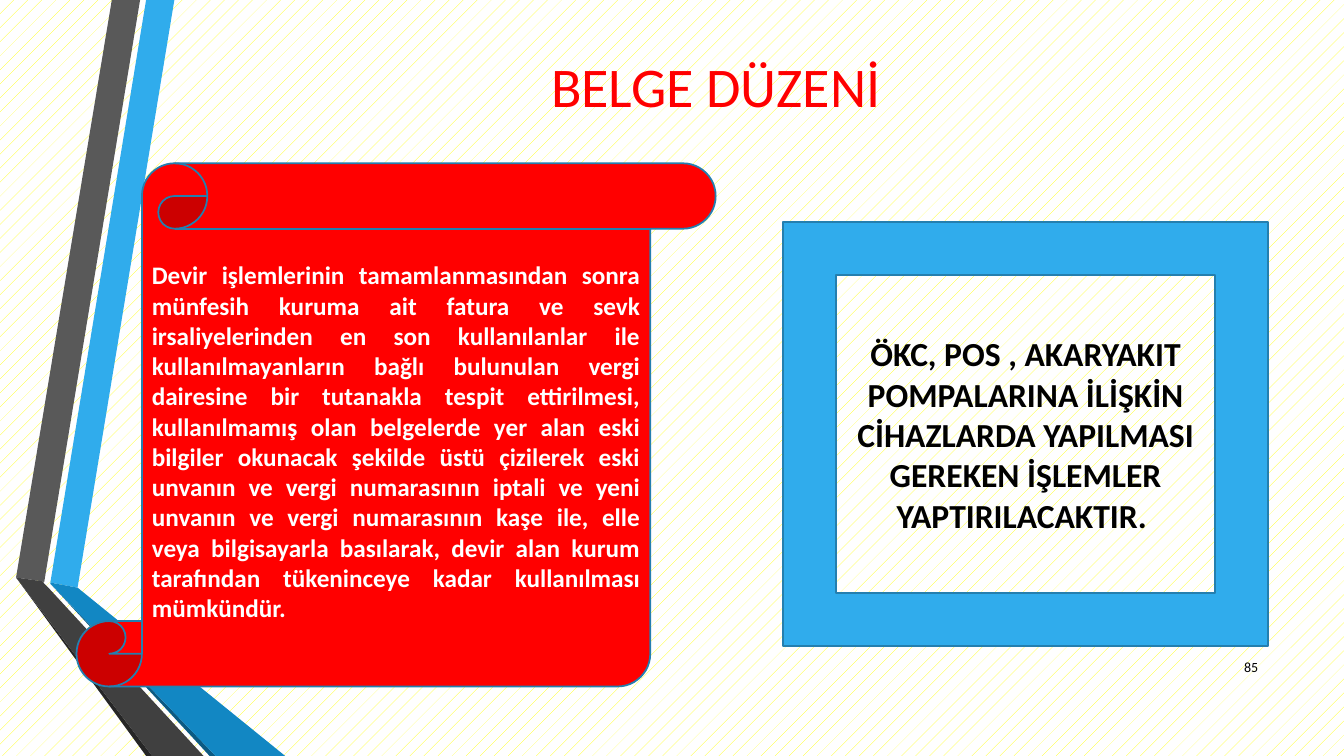
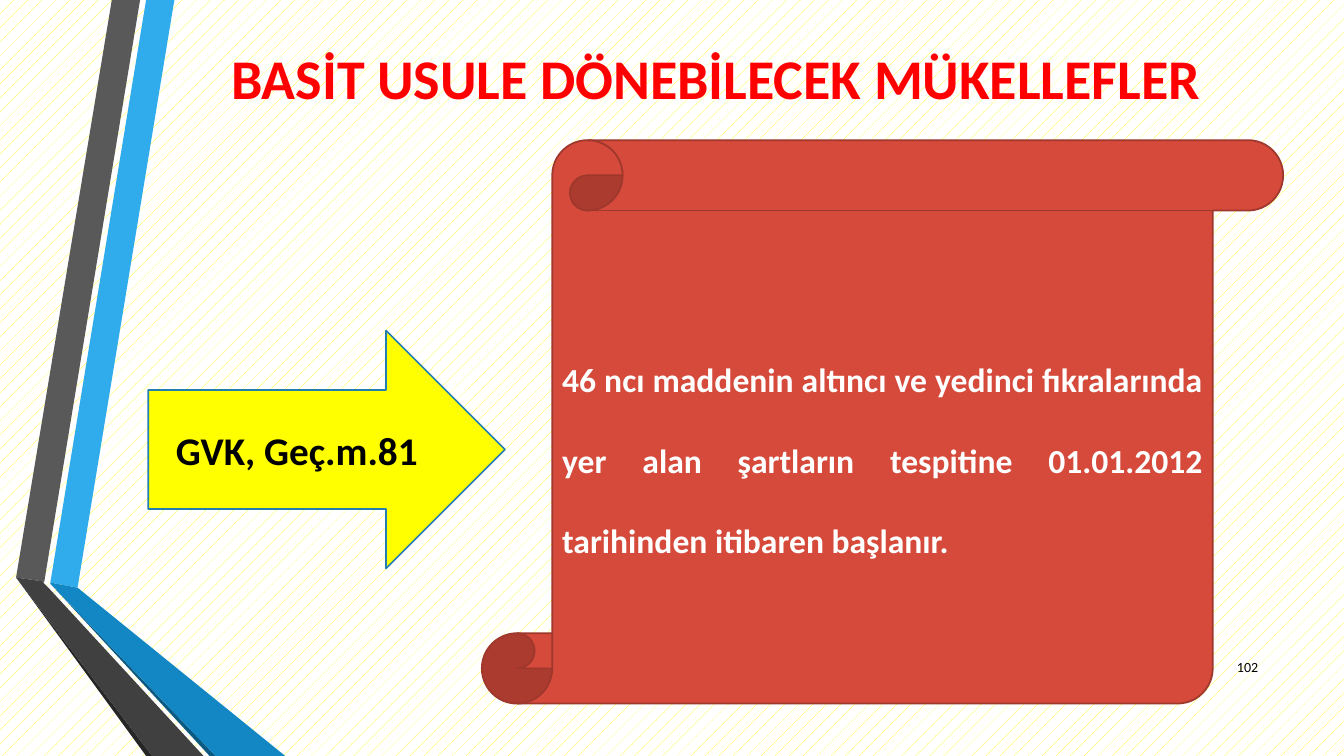
from pptx import Presentation
from pptx import util as u
from pptx.dml.color import RGBColor
from pptx.enum import dml, shapes, text

SCALE = 9144
WHITE = RGBColor(0xFF, 0xFF, 0xFF)
BLACK = RGBColor(0x00, 0x00, 0x00)
RED = RGBColor(0xFF, 0x00, 0x00)
YELLOW = RGBColor(0xFF, 0xFF, 0x00)
BLUE = RGBColor(0x30, 0xAC, 0xEC)
BLUE_FOLD = RGBColor(0x12, 0x87, 0xC3)
BLUE_SHADE = RGBColor(0x0C, 0x5A, 0x82)
BLUE_LINE = RGBColor(0x24, 0x7F, 0xAF)
GRAY = RGBColor(0x59, 0x59, 0x59)
GRAY_FOLD = RGBColor(0x40, 0x40, 0x40)
GRAY_SHADE = RGBColor(0x26, 0x26, 0x26)
BRICK = RGBColor(0xD6, 0x4A, 0x3B)
BRICK_LINE = RGBColor(0x9E, 0x37, 0x2C)

SCROLL = shapes.MSO_SHAPE.VERTICAL_SCROLL
FRAME = shapes.MSO_SHAPE.FRAME
ARROW = shapes.MSO_SHAPE.RIGHT_ARROW
CENTER, RIGHT, JUSTIFY = text.PP_ALIGN.CENTER, text.PP_ALIGN.RIGHT, text.PP_ALIGN.JUSTIFY

RIBBONS = [
    (BLUE, [(50, 578), (77, 583), (173, 0), (145, 0)]),
    (GRAY, [(139, 0), (111, 0), (16, 573), (44, 577)]),
    (GRAY_SHADE, [(16, 573), (145, 750), (151, 750)]),
    (BLUE_SHADE, [(50, 579), (208, 750), (214, 750)]),
    (BLUE_FOLD, [(50, 578), (50, 579), (214, 750), (283, 750), (77, 583)]),
    (GRAY_FOLD, [(202, 750), (48, 583), (43, 578), (44, 577), (16, 573), (151, 750)]),
]


def px(length):
    """Turn px into EMU."""
    return u.Emu(length * SCALE)


class Deck:
    """Hold the shared style and the current slide."""

    def __init__(self):
        """Start a wide presentation."""
        self.presentation = Presentation()
        self.presentation.slide_width = u.Inches(13.333)
        self.presentation.slide_height = u.Inches(7.5)
        self.slide = None

    def add_slide(self, title, number, title_height, bold):
        """Add a slide with background, ribbons, title and number."""
        self.slide = self.presentation.slides.add_slide(self.presentation.slide_layouts[6])
        fill = self.slide.background.fill
        fill.patterned()
        fill.pattern = dml.MSO_PATTERN.PERCENT_5
        fill.fore_color.rgb = YELLOW
        fill.back_color.rgb = WHITE
        for color, points in RIBBONS:
            self.ribbon(color, points)
        self.label((162, 29, 1096, title_height), title, 40, RED, CENTER, bold)
        self.label((1198, 642, 60, 40), number, 10, BLACK, RIGHT, False)

    def ribbon(self, color, points):
        """Draw one filled piece of the folded ribbons."""
        builder = self.slide.shapes.build_freeform(*points[0], scale=SCALE)
        builder.add_line_segments(points[1:], close=True)
        shape = builder.convert_to_shape()
        shape.shadow.inherit = False
        shape.fill.solid()
        shape.fill.fore_color.rgb = color
        shape.line.fill.background()

    def label(self, box, words, size, color, align, bold):
        """Add a text box."""
        shape = self.slide.shapes.add_textbox(*map(px, box))
        self.set_text(shape, words, size, color, align, bold)

    def panel(self, kind, box, fill, line, words, size, color, align, spacing=None):
        """Add a preset shape with bold text."""
        shape = self.slide.shapes.add_shape(kind, *map(px, box))
        shape.shadow.inherit = False
        shape.fill.solid()
        shape.fill.fore_color.rgb = fill
        shape.line.color.rgb = line
        shape.line.width = u.Pt(1.25)
        self.set_text(shape, words, size, color, align, True, spacing)

    def set_text(self, shape, words, size, color, align, bold, spacing=None):
        """Put one formatted paragraph into a shape."""
        frame = shape.text_frame
        paragraph = frame.paragraphs[0]
        run = paragraph.add_run()
        run.text = words
        run.font.color.rgb = color
        formats = [
            (frame, {"word_wrap": True, "vertical_anchor": text.MSO_ANCHOR.MIDDLE}),
            (paragraph, {"alignment": align, "line_spacing": spacing}),
            (run.font, {"name": "Calibri", "size": u.Pt(size), "bold": bold}),
        ]
        for target, values in formats:
            for name, value in values.items():
                setattr(target, name, value)


def main():
    """Build and save both slides."""
    deck = Deck()
    deck.add_slide("BELGE DÜZENİ", "85", 110, False)
    deck.panel(
        SCROLL, (76, 162, 634, 519), RED, BLUE_LINE,
        "Devir işlemlerinin tamamlanmasından sonra münfesih kuruma ait fatura ve sevk "
        "irsaliyelerinden en son kullanılanlar ile kullanılmayanların bağlı bulunulan vergi "
        "dairesine bir tutanakla tespit ettirilmesi, kullanılmamış olan belgelerde yer alan eski "
        "bilgiler okunacak şekilde üstü çizilerek eski unvanın ve vergi numarasının iptali ve yeni "
        "unvanın ve vergi numarasının kaşe ile, elle veya bilgisayarla basılarak, devir alan kurum "
        "tarafından tükeninceye kadar kullanılması mümkündür.",
        18, WHITE, JUSTIFY)
    deck.panel(
        FRAME, (777, 220, 481, 421), BLUE, BLUE_LINE,
        "ÖKC, POS , AKARYAKIT POMPALARINA İLİŞKİN CİHAZLARDA YAPILMASI "
        "GEREKEN İŞLEMLER YAPTIRILACAKTIR. ",
        24, BLACK, CENTER)

    deck.add_slide("BASİT USULE DÖNEBİLECEK MÜKELLEFLER", "102", 94, True)
    deck.panel(
        ARROW, (147, 328, 354, 236), YELLOW, BLUE_LINE,
        "GVK, Geç.m.81", 28, BLACK, CENTER)
    deck.panel(
        SCROLL, (478, 139, 795, 559), BRICK, BRICK_LINE,
        "46 ncı maddenin altıncı ve yedinci fıkralarında yer alan şartların tespitine "
        "01.01.2012 tarihinden itibaren başlanır.",
        24, WHITE, JUSTIFY, 2.0)
    deck.presentation.save("out.pptx")


if __name__ == "__main__":
    main()
